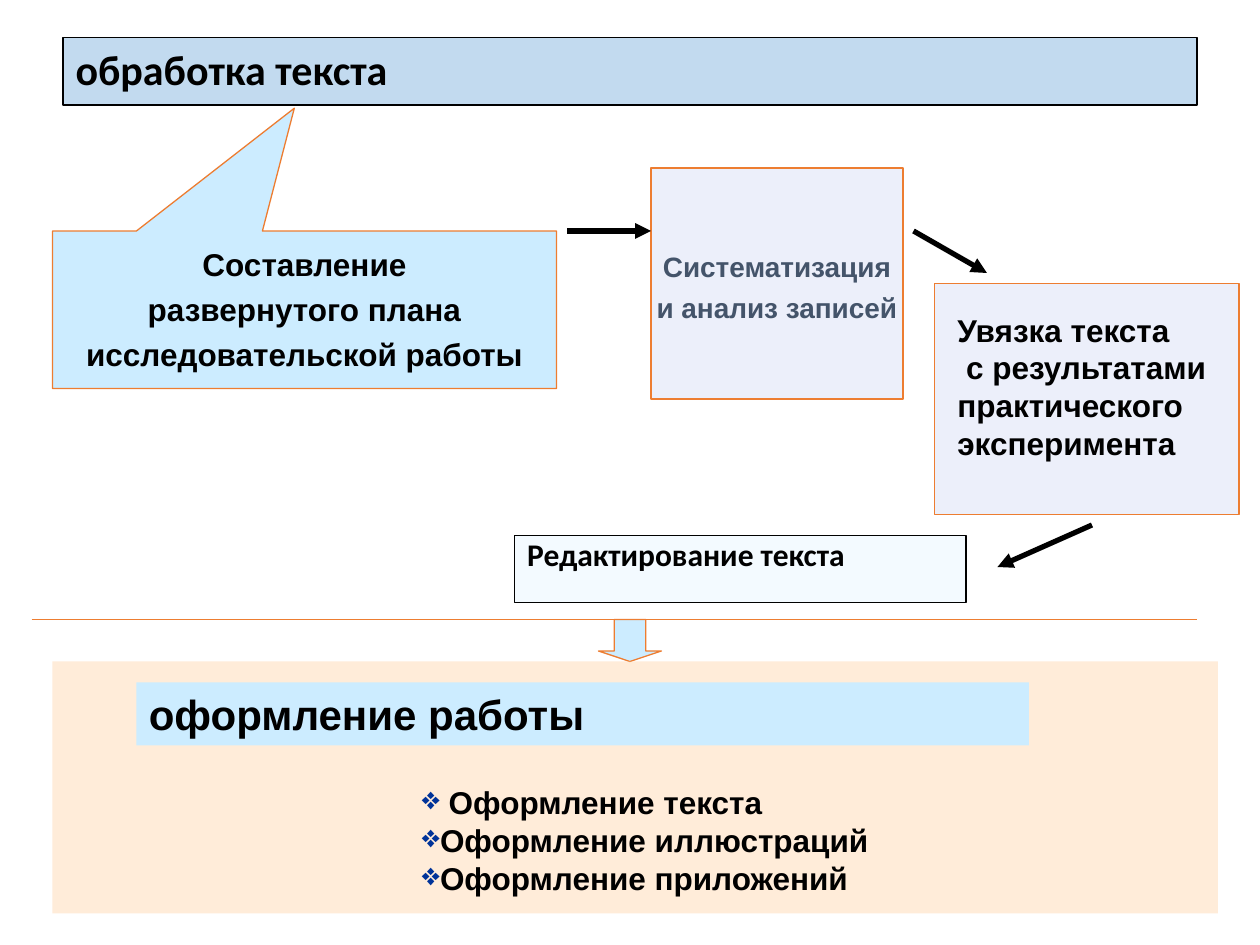
from lxml import etree
from pptx import Presentation
from pptx.dml.color import RGBColor
from pptx.enum.shapes import MSO_CONNECTOR, MSO_SHAPE
from pptx.enum.text import MSO_ANCHOR, MSO_AUTO_SIZE, PP_ALIGN
from pptx.oxml.ns import qn
from pptx.util import Inches, Pt

RECT, CALLOUT = MSO_SHAPE.RECTANGLE, MSO_SHAPE.RECTANGULAR_CALLOUT
DOWN_ARROW, STRAIGHT = MSO_SHAPE.DOWN_ARROW, MSO_CONNECTOR.STRAIGHT
LEFT, CENTER = PP_ALIGN.LEFT, PP_ALIGN.CENTER
TOP, MIDDLE = MSO_ANCHOR.TOP, MSO_ANCHOR.MIDDLE
NO_FIT = MSO_AUTO_SIZE.NONE

COLS, ROWS = 120, 90  # grid of the whole slide
CELL = Inches(10) / COLS
BLACK, SKY, LILAC, ORANGE = "000000", "CCECFF", "B2C0EC", "ED7D31"


def color(value):
    return RGBColor.from_string(value)


def emu(*cells):
    return [round(c * CELL) for c in cells]


def inside(box, x, y, w, h):
    """Grid box placed relative to the corner of another one."""
    return box[0] + x, box[1] + y, w, h


def place(sp, box):
    sp.left, sp.top, sp.width, sp.height = emu(*box)


def paint(sp, fill, alpha=100, line=None):
    sp.fill.solid()
    sp.fill.fore_color.rgb = color(fill)
    if alpha < 100:
        clr = sp.fill._xPr.find(qn("a:solidFill"))[0]
        etree.SubElement(clr, qn("a:alpha"), val=str(alpha * 1000))
    if line:
        sp.line.color.rgb = color(line)
        sp.line.width = Pt(0.75)
    else:
        sp.line.fill.background()


def add_box(slide, kind, box, fill, alpha=100, line=None):
    sp = slide.shapes.add_shape(kind, *emu(*box))
    sp.shadow.inherit = False
    paint(sp, fill, alpha, line)
    return sp


def add_line(slide, start, end, line, width, arrow=False):
    cn = slide.shapes.add_connector(STRAIGHT, *emu(*start, *end))
    cn.line.color.rgb = color(line)
    cn.line.width = Pt(width)
    if arrow:
        etree.SubElement(cn.line._get_or_add_ln(), qn("a:tailEnd"), type="triangle")
    etree.SubElement(cn._element.spPr, qn("a:effectLst"))


def write(sp, lines, size, font="Arial", fill=BLACK, align=LEFT, spacing=1.0,
          anchor=TOP, wrap=True, bullet=None):
    tf = sp.text_frame
    tf.auto_size = NO_FIT
    tf.word_wrap = wrap
    tf.vertical_anchor = anchor
    for i, text in enumerate(lines):
        p = tf.paragraphs[0] if i == 0 else tf.add_paragraph()
        p.alignment = align
        p.line_spacing = spacing
        p.space_before = Pt(0)
        pPr = p._p.get_or_add_pPr()
        pPr.set("marL", "0")
        pPr.set("indent", "0")
        if bullet:
            clr = etree.SubElement(pPr, qn("a:buClr"))
            etree.SubElement(clr, qn("a:srgbClr"), val="003399")
            etree.SubElement(pPr, qn("a:buChar"), char=bullet)
        else:
            etree.SubElement(pPr, qn("a:buNone"))
        r = p.add_run()
        r.text = text
        r.font.name = font
        r.font.size = Pt(size)
        r.font.bold = True
        r.font.color.rgb = color(fill)


def build_title(slide, box):
    sp = slide.shapes.title
    place(sp, box)
    paint(sp, "5B9BD5", 37, BLACK)
    write(sp, ["обработка текста"], 24, "Calibri", spacing=0.9, anchor=MIDDLE)


def build_steps(slide, box):
    # Plan: callout pointing up at the title
    sp = add_box(slide, CALLOUT, inside(box, 0, 6, 48, 15), SKY, line=ORANGE)
    sp.adjustments[0], sp.adjustments[1] = -0.02, -1.28
    write(sp, ["Составление", "развернутого плана", "исследовательской работы"],
          18, align=CENTER, spacing=1.2)

    # Systematisation
    sp = add_box(slide, RECT, inside(box, 57, 0, 24, 22), LILAC, 24, ORANGE)
    write(sp, ["Систематизация", "и анализ записей"], 16, fill="44546A",
          align=CENTER, spacing=1.2, anchor=MIDDLE, wrap=False)

    # Link with the experiment
    add_box(slide, RECT, inside(box, 84, 11, 29, 22), LILAC, 24, ORANGE)
    tb = slide.shapes.add_textbox(*emu(*inside(box, 85, 13, 27.4, 15.6)))
    write(tb, ["Увязка текста", " с результатами", "практического", "эксперимента"],
          18, wrap=False)

    # Editing
    sp = slide.placeholders[1]
    place(sp, inside(box, 44, 35, 43, 6.4))
    paint(sp, SKY, 23, BLACK)
    write(sp, ["Редактирование текста"], 18, "Calibri", spacing=0.8)

    # Arrows from step to step
    x, y = box[:2]
    for x1, y1, x2, y2 in [(49, 6, 57, 6), (82, 6, 89, 10), (99, 34, 90, 38)]:
        add_line(slide, (x + x1, y + y1), (x + x2, y + y2), BLACK, 3, arrow=True)


def build_divider(slide, box):
    x, y, w, h = box
    sp = add_box(slide, DOWN_ARROW, inside(box, 54, 0, 6, h), SKY, line=ORANGE)
    sp.adjustments[0], sp.adjustments[1] = 0.5, 0.25
    add_line(slide, (x, y), (x + w, y), ORANGE, 0.75)


def build_layout_panel(slide, box):
    add_box(slide, RECT, box, "FFCC99", 37)
    sp = add_box(slide, RECT, inside(box, 8, 2, 85, 6), SKY)
    write(sp, ["оформление работы"], 24)
    tb = slide.shapes.add_textbox(*emu(*inside(box, 34, 11, 46, 12)))
    write(tb, [" Оформление текста", "Оформление иллюстраций", "Оформление приложений"],
          18, wrap=False, bullet="❖")


def main():
    prs = Presentation()
    prs.slide_width, prs.slide_height = emu(COLS, ROWS)
    slide = prs.slides.add_slide(prs.slide_layouts[1])
    build_title(slide, (6, 3.6, 108, 6.4))
    build_steps(slide, (5, 16, 113, 41.4))
    build_divider(slide, (3, 59, 111, 4))
    build_layout_panel(slide, (5, 63, 111, 24))
    prs.save("out.pptx")


if __name__ == "__main__":
    main()
